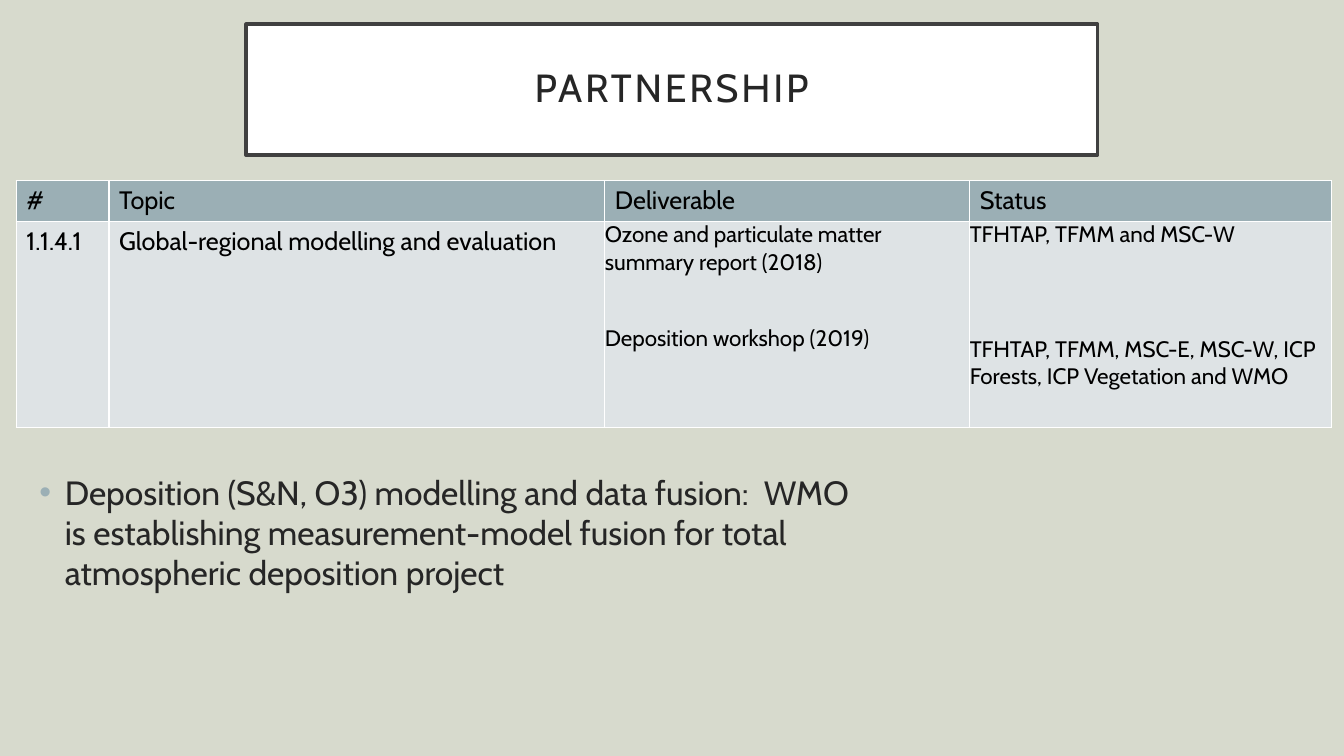
from dataclasses import dataclass

from lxml import etree
from pptx import Presentation
from pptx.dml.color import RGBColor
from pptx.enum.text import MSO_ANCHOR, MSO_AUTO_SIZE, PP_ALIGN
from pptx.oxml.ns import qn
from pptx.util import Cm, Pt

CENTER = PP_ALIGN.CENTER
TOP, MIDDLE = MSO_ANCHOR.TOP, MSO_ANCHOR.MIDDLE
NO_AUTOFIT = MSO_AUTO_SIZE.NONE


@dataclass(frozen=True)
class Theme:
    font: str = "Cabin"
    background: str = "D7DACD"
    white: str = "FFFFFF"
    frame: str = "404040"
    text: str = "262626"
    table_text: str = "000000"
    accent: str = "9BAFB5"
    row: str = "DEE3E5"
    title_size: int = 28
    body_size: int = 24
    table_size: int = 18
    detail_size: int = 16


THEME = Theme()

HEADERS = ["#", "Topic", "Deliverable", "Status"]
COLUMN_SHARES = [0.92, 4.92, 3.62, 3.59]
HEADER_HEIGHT = Cm(1.03)
# Each detail is a text and the space above it in points.
NUMBER = "1.1.4.1"
TOPIC = "Global-regional modelling and evaluation"
DELIVERABLES = [("Ozone and particulate matter summary report (2018)", 2),
                ("Deposition workshop (2019)", 29.3)]
STATUSES = [("TFHTAP, TFMM and MSC-W", 2),
            ("TFHTAP, TFMM, MSC-E, MSC-W, ICP Forests, ICP Vegetation and WMO", 56.6)]
FUSION = ("Deposition (S&N, O3) modelling and data fusion:  WMO is establishing "
          "measurement-model fusion for total atmospheric deposition project")


def rgb(value):
    return RGBColor.from_string(value)


def style(p, size, color):
    p.font.name = THEME.font
    p.font.size = Pt(size)
    p.font.bold = False
    p.font.color.rgb = rgb(color)


def place(sp, box):
    sp.left, sp.top, sp.width, sp.height = box


def set_margins(target, margin):
    target.margin_left = target.margin_right = margin
    target.margin_top = target.margin_bottom = margin


def add_title(slide, box):
    sp = slide.shapes.title
    place(sp, box)
    sp.fill.solid()
    sp.fill.fore_color.rgb = rgb(THEME.white)
    sp.line.color.rgb = rgb(THEME.frame)
    sp.line.width = Pt(2.5)
    tf = sp.text_frame
    tf.auto_size = NO_AUTOFIT
    tf.vertical_anchor = MIDDLE
    set_margins(tf, Cm(0.5))
    p = tf.paragraphs[0]
    p.alignment = CENTER
    p.line_spacing = 0.9
    r = p.add_run()
    r.text = "PARTNERSHIP"
    style(p, THEME.title_size, THEME.text)
    r.font._element.set("spc", "200")


def add_body(slide, box):
    sp = slide.placeholders[1]
    place(sp, box)
    tf = sp.text_frame
    tf.auto_size = NO_AUTOFIT
    tf.vertical_anchor = TOP
    tf.text = FUSION
    p = tf.paragraphs[0]
    style(p, THEME.body_size, THEME.text)
    p.space_before = Pt(10)
    add_bullet(p, Cm(0.64))


def add_bullet(p, indent):
    pPr = p._p.get_or_add_pPr()
    pPr.set("marL", str(indent))
    pPr.set("indent", str(-indent))
    # The bullet follows the spacing and precedes the run defaults.
    color = etree.Element(qn("a:buClr"))
    etree.SubElement(color, qn("a:srgbClr"), val=THEME.accent)
    font = etree.Element(qn("a:buFont"), typeface="Arial")
    char = etree.Element(qn("a:buChar"), char="•")
    spacing = pPr.find(qn("a:spcBef"))
    for element in (char, font, color):
        spacing.addnext(element)


def format_cell(cell, fill):
    tcPr = cell._tc.get_or_add_tcPr()
    for side in ("lnL", "lnR", "lnT", "lnB"):
        line = etree.SubElement(tcPr, qn(f"a:{side}"), w=str(Pt(1)))
        solid = etree.SubElement(line, qn("a:solidFill"))
        etree.SubElement(solid, qn("a:srgbClr"), val=THEME.white)
    cell.fill.solid()
    cell.fill.fore_color.rgb = rgb(fill)


def fill_label(cell, text):
    cell.text = text
    style(cell.text_frame.paragraphs[0], THEME.table_size, THEME.table_text)


def fill_details(cell, details):
    set_margins(cell, 0)
    tf = cell.text_frame
    for i, (text, space) in enumerate(details):
        p = tf.add_paragraph() if i else tf.paragraphs[0]
        p.text = text
        p.space_before, p.space_after = Pt(space), Pt(6)
        style(p, THEME.detail_size, THEME.table_text)


def add_partner_table(slide, box):
    left, top, width, height = box
    table = slide.shapes.add_table(2, len(HEADERS), left, top, width, height).table
    table.first_row = table.horz_banding = False
    for column, share in zip(table.columns, COLUMN_SHARES):
        column.width = int(width * share / sum(COLUMN_SHARES))
    table.rows[0].height = HEADER_HEIGHT
    table.rows[1].height = height - HEADER_HEIGHT
    for row, fill in enumerate((THEME.accent, THEME.row)):
        for cell in table.rows[row].cells:
            format_cell(cell, fill)
    for col, header in enumerate(HEADERS):
        fill_label(table.cell(0, col), header)
    fill_label(table.cell(1, 0), NUMBER)
    fill_label(table.cell(1, 1), TOPIC)
    fill_details(table.cell(1, 2), DELIVERABLES)
    fill_details(table.cell(1, 3), STATUSES)


def add_partnership_slide(prs):
    slide = prs.slides.add_slide(prs.slide_layouts[1])
    slide.background.fill.solid()
    slide.background.fill.fore_color.rgb = rgb(THEME.background)
    add_title(slide, (Cm(6.2), Cm(0.61), Cm(21.46), Cm(3.3)))
    add_body(slide, (Cm(0.74), Cm(11.76), Cm(21.08), Cm(4.32)))
    add_partner_table(slide, (Cm(0.41), Cm(4.55), Cm(33.15), Cm(6.22)))


def main():
    prs = Presentation()
    prs.slide_width, prs.slide_height = Cm(33.87), Cm(19.05)
    add_partnership_slide(prs)
    prs.save("out.pptx")


if __name__ == "__main__":
    main()
